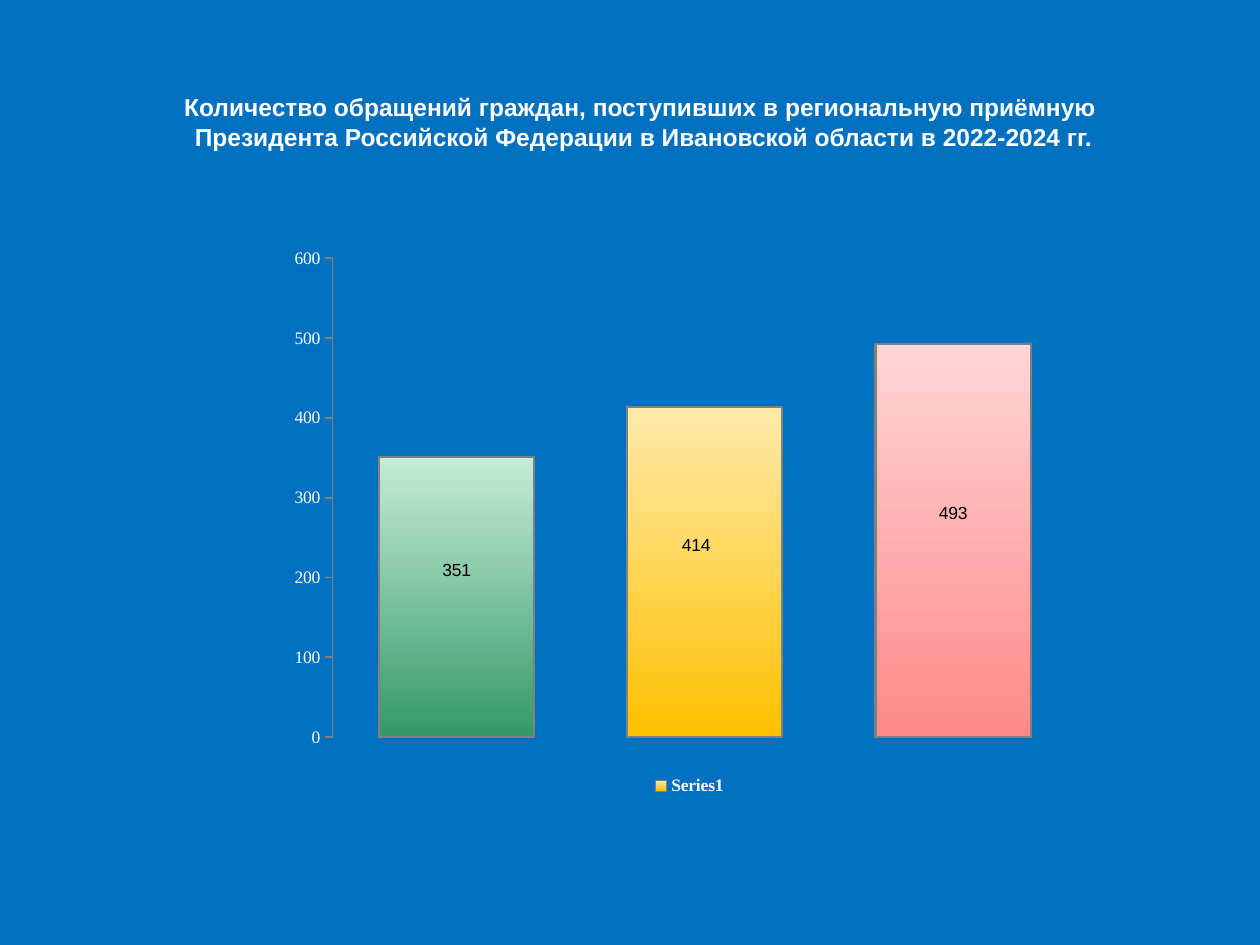
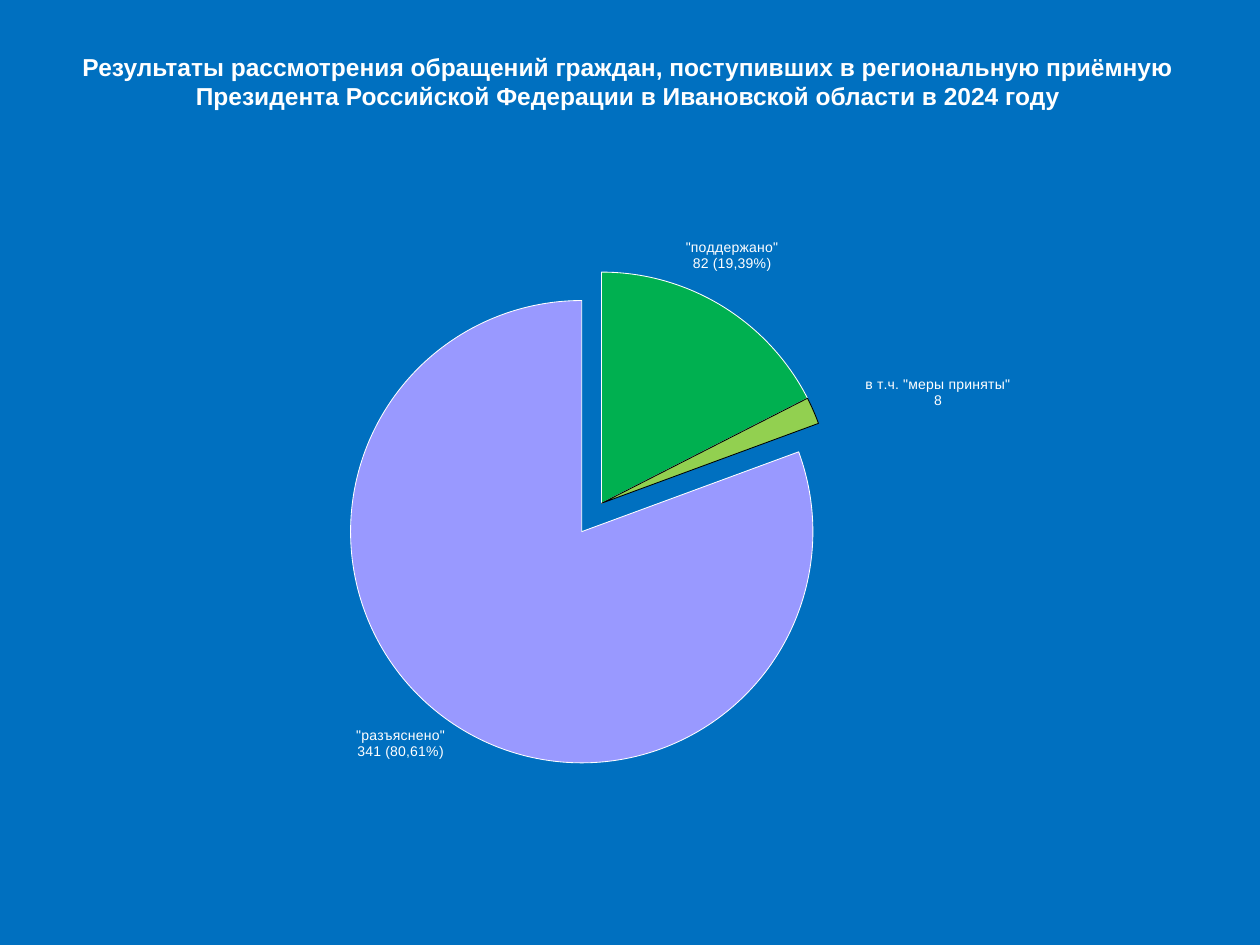
"""Build two slides with charts on citizens' appeals in the Ivanovo region."""
from lxml import etree
from pptx import Presentation
from pptx.chart.data import CategoryChartData
from pptx.dml.color import RGBColor
from pptx.enum.chart import (XL_CHART_TYPE as ChartType, XL_LABEL_POSITION as LabelPosition,
                             XL_LEGEND_POSITION as LegendPosition, XL_TICK_MARK as TickMark)
from pptx.enum.text import MSO_ANCHOR as Anchor, PP_ALIGN as Align
from pptx.oxml.ns import qn
from pptx.util import Inches, Pt

COLORS = {"background": "0070C0", "white": "FFFFFF", "black": "000000", "gray": "808080",
          "green": "00B050", "lime": "92D050", "lilac": "9999FF", "red": "C00000"}
HEADING_FONT, AXIS_FONT = "Arial", "Times New Roman"

APPEALS = {
    "title": ["Количество обращений граждан, поступивших в региональную приёмную ",
              "Президента Российской Федерации в Ивановской области в 2022-2024 гг."],
    "title_box": (0.35, 0.65, 9.52, 0.63),
    "chart_box": (2.01, 1.39, 6.54, 5.35),
    "plot_box": (0.63, 0.66, 5.91, 3.8),
    "series": "",
    "categories": ["1", "2", "3"],
    "values": [351, 414, 493],
}
LEGEND_PLACE = (3.15, 4.73)
SERIES_GRADIENT = ("FFEBAB", "FFC000")
POINT_GRADIENTS = {0: ("C6ECD9", "339966"), 2: ("FFD5D5", "FF8989")}
COLUMN_LABEL_SHIFTS = [(0, -0.21), (-0.07, -0.21), (0, -0.21)]

RESULTS = {
    "title": ["Результаты рассмотрения обращений граждан, поступивших в региональную приёмную",
              "Президента Российской Федерации в Ивановской области в 2024 году"],
    "title_box": (0.26, 0.33, 9.45, 0.63),
    "chart_box": (1.78, 1.7, 6.69, 4.66),
    "plot_box": (1.16, 0.46, 3.67, 3.67),
    "series": "Series 1",
    "categories": ['"поддержано"', 'в т.ч. "меры приняты"', '"разъяснено"', '"не поддержано"'],
    "values": [74, 8, 341, 0],
}
SLICES = [("green", "white", "82 (19,39%)", (-0.32, -0.23)),
          ("lime", "black", "8", (0.36, 0)),
          ("lilac", "white", "341 (80,61%)", (0, 0)),
          ("red", "white", None, None)]
EXPLODED_SLICE, EXPLOSION = 2, 15


def rgb(name):
    return RGBColor.from_string(COLORS[name])


def style_font(font, size, color, name, bold=False):
    font.size, font.name, font.bold = Pt(size), name, bold
    font.color.rgb = rgb(color)


def style_line(line, color, width):
    line.color.rgb = rgb(color)
    line.width = Pt(width)


def fill_gradient(fill, colors):
    fill.gradient()
    fill.gradient_angle = 270
    for stop, color in zip(fill.gradient_stops, colors):
        stop.color.rgb = RGBColor.from_string(color)


def set_layout(parent, index, content, lengths, **modes):
    for old_layout in parent.findall(qn("c:layout")):
        parent.remove(old_layout)
    layout = etree.Element(qn("c:layout"))
    manual = etree.SubElement(layout, qn("c:manualLayout"))
    sizes = content["chart_box"][2:] * 2
    shares = {name: round(length / size, 4) for name, length, size in zip("xywh", lengths, sizes)}
    for name, value in {**modes, **shares}.items():
        etree.SubElement(manual, qn(f"c:{name}")).set("val", str(value))
    parent.insert(index, layout)


def find_part(series, part, index):
    return series._element.xpath(f".//c:{part}[c:idx/@val='{index}']")[0]


def hide_leader_lines(series):
    labels = series.data_labels._element
    for leader_lines in labels.findall(qn("c:showLeaderLines")):
        leader_lines.set("val", "0")


def add_title(slide, lines, box):
    title = slide.shapes.title
    title.left, title.top, title.width, title.height = map(Inches, box)
    frame = title.text_frame
    frame.word_wrap = True
    frame.vertical_anchor = Anchor.MIDDLE
    paragraph = frame.paragraphs[0]
    paragraph.alignment = Align.CENTER
    for number, line in enumerate(lines):
        if number:
            paragraph.add_line_break()
        run = paragraph.add_run()
        run.text = line
        style_font(run.font, 14, "white", HEADING_FONT, True)


def add_chart_slide(presentation, content, chart_type):
    slide = presentation.slides.add_slide(presentation.slide_layouts.get_by_name("Title Only"))
    add_title(slide, content["title"], content["title_box"])
    data = CategoryChartData()
    data.categories = content["categories"]
    data.add_series(content["series"], content["values"])
    chart = slide.shapes.add_chart(chart_type, *map(Inches, content["chart_box"]), data).chart
    chart.has_title = chart.has_legend = False
    chart.plots[0].vary_by_categories = False
    style_font(chart.font, 10, "black", HEADING_FONT)
    plot_area = chart._chartSpace.find(f".//{qn('c:plotArea')}")
    set_layout(plot_area, 0, content, content["plot_box"],
               layoutTarget="inner", xMode="edge", yMode="edge")
    return chart


def build_appeals(presentation):
    chart = add_chart_slide(presentation, APPEALS, ChartType.COLUMN_STACKED)
    plot = chart.plots[0]
    plot.gap_width, plot.overlap = 60, 100

    chart.category_axis.visible = False
    axis = chart.value_axis
    axis.has_major_gridlines = False
    axis.minimum_scale, axis.maximum_scale, axis.major_unit = 0, 600, 100
    axis.major_tick_mark = TickMark.OUTSIDE
    style_line(axis.format.line, "gray", 1)
    style_font(axis.tick_labels.font, 10, "white", AXIS_FONT)

    series = plot.series[0]
    series._element.remove(series._element.find(qn("c:tx")))
    fill_gradient(series.format.fill, SERIES_GRADIENT)
    style_line(series.format.line, "gray", 1.15)
    for index, colors in POINT_GRADIENTS.items():
        point_format = series.points[index].format
        fill_gradient(point_format.fill, colors)
        style_line(point_format.line, "gray", 1.15)
    series.data_labels.show_value = True
    style_font(series.data_labels.font, 10, "black", HEADING_FONT)
    for index, shift in enumerate(COLUMN_LABEL_SHIFTS):
        label = series.points[index].data_label
        style_font(label.font, 10, "black", HEADING_FONT)
        label.position = LabelPosition.CENTER
        set_layout(find_part(series, "dLbl", index), 1, APPEALS, shift)
    hide_leader_lines(series)

    chart.has_legend = True
    legend = chart.legend
    legend.position = LegendPosition.BOTTOM
    legend.include_in_layout = False
    style_font(legend.font, 10, "white", AXIS_FONT, True)
    set_layout(legend._element, 1, APPEALS, LEGEND_PLACE, xMode="edge", yMode="edge")


def add_slice_label(point, lines):
    label = point.data_label
    frame = label.text_frame
    for number, line in enumerate(lines):
        paragraph = frame.add_paragraph() if number else frame.paragraphs[0]
        run = paragraph.add_run()
        run.text = line
        style_font(run.font, 8, "white", HEADING_FONT)
    label.position = LabelPosition.OUTSIDE_END


def delete_label(series, index):
    style_font(series.points[index].data_label.font, 8, "white", HEADING_FONT)
    label = find_part(series, "dLbl", index)
    for child in list(label)[1:]:
        label.remove(child)
    etree.SubElement(label, qn("c:delete")).set("val", "1")


def build_results(presentation):
    chart = add_chart_slide(presentation, RESULTS, ChartType.PIE)
    series = chart.plots[0].series[0]
    labels = series.data_labels
    labels.show_value = labels.show_category_name = True
    labels.position = LabelPosition.OUTSIDE_END
    style_font(labels.font, 8, "white", HEADING_FONT, True)
    for index, (color, outline, result, shift) in enumerate(SLICES):
        point = series.points[index]
        point.format.fill.solid()
        point.format.fill.fore_color.rgb = rgb(color)
        style_line(point.format.line, outline, 0.48)
        if result:
            add_slice_label(point, [RESULTS["categories"][index], result])
            set_layout(find_part(series, "dLbl", index), 1, RESULTS, shift)
        else:
            delete_label(series, index)
    hide_leader_lines(series)
    explosion = etree.Element(qn("c:explosion"), val=str(EXPLOSION))
    find_part(series, "dPt", EXPLODED_SLICE).find(qn("c:spPr")).addprevious(explosion)


def main():
    presentation = Presentation()
    presentation.slide_width, presentation.slide_height = Inches(10), Inches(7.5)
    background = presentation.slide_master.background.fill
    background.solid()
    background.fore_color.rgb = rgb("background")
    build_appeals(presentation)
    build_results(presentation)
    presentation.save("out.pptx")


if __name__ == "__main__":
    main()
